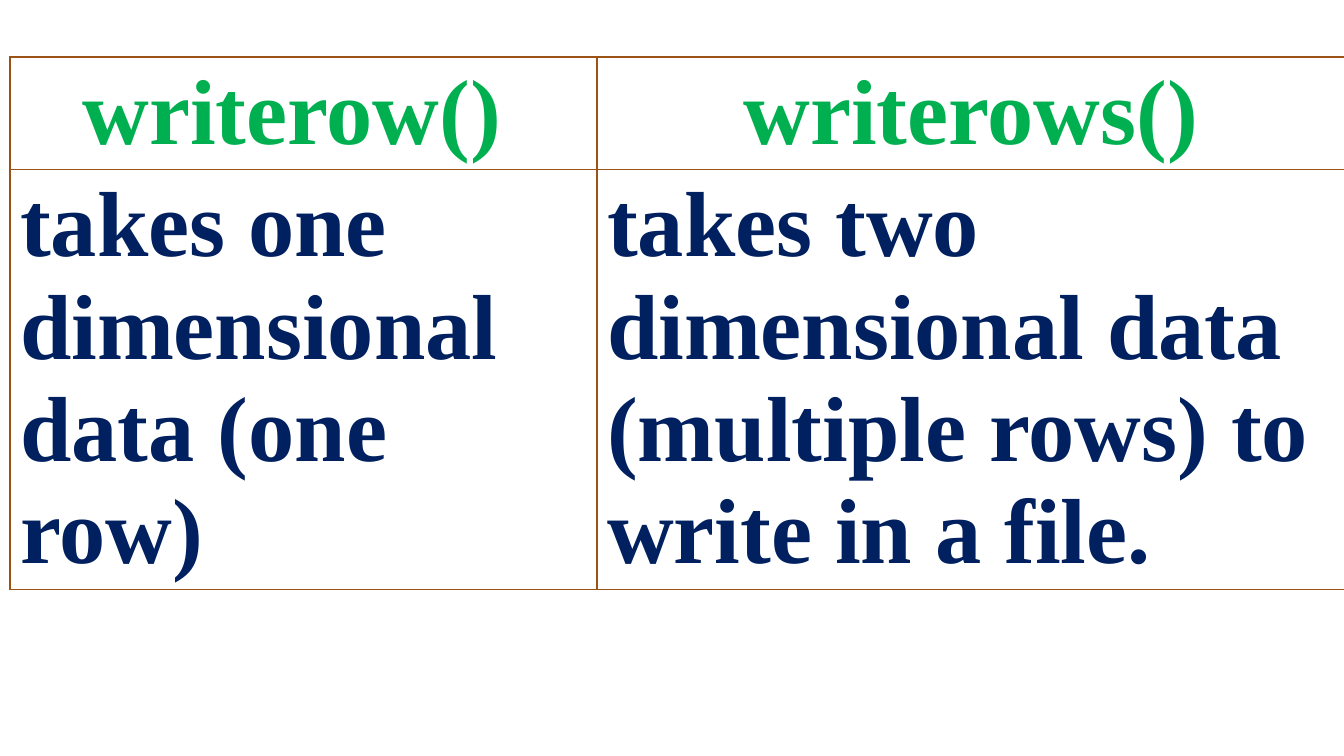
from dataclasses import dataclass

from lxml import etree
from pptx import Presentation
from pptx.dml.color import RGBColor
from pptx.enum.text import PP_ALIGN
from pptx.oxml.ns import qn
from pptx.table import _Cell
from pptx.util import Emu, Pt

CENTER = PP_ALIGN.CENTER
LEFT = PP_ALIGN.LEFT
EMU_PER_PX = 914400 / 100.8
COLORS = {"heading": "00B050", "body": "002060", "border": "9A5315"}
FONT_NAME = "Times New Roman"
FONT_SIZE = 66
BORDER_POINTS = 1
TABLE_LEFT, TABLE_TOP = 10, 57
COLUMN_WIDTHS = (587, 748)


@dataclass
class TableRow:
    texts: tuple[str, str]
    height: int
    color: str
    alignment: PP_ALIGN


ROWS = (
    TableRow(("writerow() ", "writerows()"), 112, "heading", CENTER),
    TableRow(
        (
            "takes one dimensional data (one row)",
            "takes two dimensional data (multiple rows) to write in a file.",
        ),
        420,
        "body",
        LEFT,
    ),
)


def px(length: int) -> Emu:
    return Emu(round(length * EMU_PER_PX))


def draw_borders(cell: _Cell) -> None:
    properties = cell._tc.get_or_add_tcPr()
    for position, side in enumerate(("lnL", "lnR", "lnT", "lnB")):
        line = etree.Element(qn(f"a:{side}"), w=str(Pt(BORDER_POINTS)))
        fill = etree.SubElement(line, qn("a:solidFill"))
        etree.SubElement(fill, qn("a:srgbClr"), val=COLORS["border"])
        properties.insert(position, line)


def fill_cell(cell: _Cell, text: str, row: TableRow) -> None:
    cell.fill.background()
    draw_borders(cell)
    cell.text = text
    paragraph = cell.text_frame.paragraphs[0]
    paragraph.alignment = row.alignment
    paragraph.font.name = FONT_NAME
    paragraph.font.size = Pt(FONT_SIZE)
    paragraph.font.bold = True
    paragraph.font.color.rgb = RGBColor.from_string(COLORS[row.color])


def main() -> None:
    presentation = Presentation()
    presentation.slide_width = px(1344)
    presentation.slide_height = px(756)
    slide = presentation.slides.add_slide(presentation.slide_layouts[6])
    table = slide.shapes.add_table(
        len(ROWS),
        len(COLUMN_WIDTHS),
        px(TABLE_LEFT),
        px(TABLE_TOP),
        px(sum(COLUMN_WIDTHS)),
        px(sum(row.height for row in ROWS)),
    ).table
    table.first_row = False
    table.horz_banding = False
    for column, width in zip(table.columns, COLUMN_WIDTHS):
        column.width = px(width)
    for table_row, row in zip(table.rows, ROWS):
        table_row.height = px(row.height)
        for cell, text in zip(table_row.cells, row.texts):
            fill_cell(cell, text, row)
    presentation.save("out.pptx")


if __name__ == "__main__":
    main()
